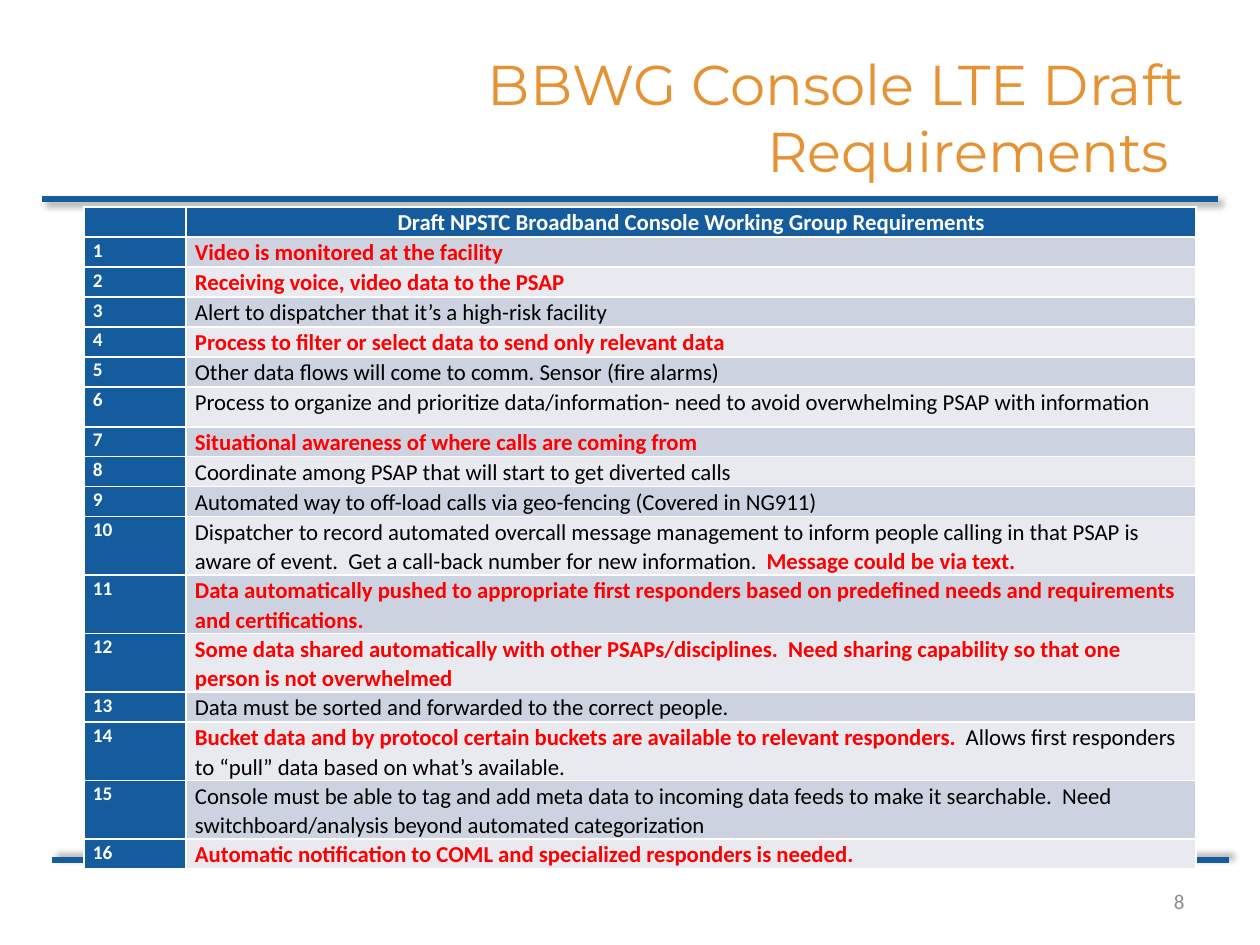
import pptx
import pptx.dml.color
import pptx.enum.shapes
import pptx.enum.text
import pptx.oxml
import pptx.oxml.ns
import pptx.util

PX = 914400 // 126
COLOURS = {
    "blue": "155C9E",
    "orange": "E69232",
    "red": "FF0000",
    "black": "000000",
    "white": "FFFFFF",
    "grey": "8C8C8C",
    "odd row": "CCD2DF",
    "even row": "E8EAF0",
}
ALIGN = pptx.enum.text.PP_ALIGN
ANCHOR = pptx.enum.text.MSO_ANCHOR
LINE_HEIGHT, LOOSE_HEIGHT, DOUBLE_HEIGHT = 30, 40, 58

# Each requirement is a row height and its spans; key spans are bold red.
REQUIREMENTS = [
    (LINE_HEIGHT, [("Video is monitored at the facility", True)]),
    (LINE_HEIGHT, [("Receiving voice, video data to the PSAP", True)]),
    (LINE_HEIGHT, [("Alert to dispatcher that it’s a high-risk facility", False)]),
    (LINE_HEIGHT, [("Process to filter or select data to send only relevant data", True)]),
    (LINE_HEIGHT, [("Other data flows will come to comm. Sensor (fire alarms)", False)]),
    (LOOSE_HEIGHT, [("Process to organize and prioritize data/information- need to avoid "
                     "overwhelming PSAP with information", False)]),
    (LINE_HEIGHT, [("Situational awareness of where calls are coming from", True)]),
    (LINE_HEIGHT, [("Coordinate among PSAP that will start to get diverted calls", False)]),
    (LINE_HEIGHT, [("Automated way to off-load calls via geo-fencing (Covered in NG911)", False)]),
    (DOUBLE_HEIGHT, [("Dispatcher to record automated overcall message management to inform "
                      "people calling in that PSAP is aware of event.  Get a call-back number "
                      "for new information.  ", False),
                     ("Message could be via text.", True)]),
    (DOUBLE_HEIGHT, [("Data automatically pushed to appropriate first responders based on "
                      "predefined needs and requirements and certifications.", True)]),
    (DOUBLE_HEIGHT, [("Some data shared automatically with other PSAPs/disciplines.  Need "
                      "sharing capability so that one person is not overwhelmed", True)]),
    (LINE_HEIGHT, [("Data must be sorted and forwarded to the correct people.", False)]),
    (DOUBLE_HEIGHT, [("Bucket data and by protocol certain buckets are available to relevant "
                      "responders.  ", True),
                     ("Allows first responders to “pull” data based on what’s available.", False)]),
    (DOUBLE_HEIGHT, [("Console must be able to tag and add meta data to incoming data feeds to "
                      "make it searchable.  Need switchboard/analysis beyond automated "
                      "categorization", False)]),
    (LINE_HEIGHT, [("Automatic notification to COML and specialized responders is needed.", True)]),
]


def colour(name):
    return pptx.dml.color.RGBColor.from_string(COLOURS[name])


def place(shape, left, top, width, height):
    shape.left, shape.top = left * PX, top * PX
    shape.width, shape.height = width * PX, height * PX


def style_paragraph(para, font_name, size, align, colour_name):
    para.alignment = align
    para.font.name = font_name
    para.font.size = pptx.util.Pt(size)
    para.font.color.rgb = colour(colour_name)


def add_title(page, text):
    title = page.shapes.title
    place(title, 252, 38, 945, 157)
    title.text_frame.text = text
    title.text_frame.vertical_anchor = ANCHOR.MIDDLE
    style_paragraph(title.text_frame.paragraphs[0], "Montserrat", 32, ALIGN.RIGHT, "orange")


def add_page_number(page, text):
    box = page.shapes.add_textbox(0, 0, 0, 0)
    place(box, 903, 876, 294, 50)
    box.text_frame.word_wrap = True
    box.text_frame.vertical_anchor = ANCHOR.MIDDLE
    box.text_frame.text = text
    style_paragraph(box.text_frame.paragraphs[0], "Calibri", 12, ALIGN.RIGHT, "grey")


def add_rule(page, right, left, y, shadow_degrees):
    """Draw a thick horizontal line with a soft shadow."""
    rule = page.shapes.add_connector(
        pptx.enum.shapes.MSO_CONNECTOR.STRAIGHT, right * PX, y * PX, left * PX, y * PX)
    rule.line.color.rgb = colour("blue")
    rule.line.width = pptx.util.Pt(3)
    rule._element.spPr.append(pptx.oxml.parse_xml(
        f'<a:effectLst {pptx.oxml.ns.nsdecls("a")}>'
        f'<a:outerShdw blurRad="{pptx.util.Pt(4)}" dist="{pptx.util.Pt(3)}" '
        f'dir="{shadow_degrees * 60000}" algn="tl" rotWithShape="0">'
        f'<a:srgbClr val="{COLOURS["black"]}"><a:alpha val="40000"/></a:srgbClr>'
        '</a:outerShdw></a:effectLst>'))


def fill_cell(cell, fill_name, size, spans, align=ALIGN.LEFT):
    """Format a cell; spans are (text, colour name, bold) triples."""
    cell.fill.solid()
    cell.fill.fore_color.rgb = colour(fill_name)
    cell.margin_left = cell.margin_right = 9 * PX
    cell.margin_top = cell.margin_bottom = 0
    para = cell.text_frame.paragraphs[0]
    para.alignment = align
    para.line_spacing = 1.07
    para.font.name = "Calibri"
    para.font.size = pptx.util.Pt(size)
    for text, colour_name, bold in spans:
        span = para.add_run()
        span.text = text
        span.font.color.rgb = colour(colour_name)
        span.font.bold = bold
    if not spans:
        para._p.append(pptx.oxml.parse_xml(
            f'<a:endParaRPr {pptx.oxml.ns.nsdecls("a")} sz="{size * 100}"/>'))


def add_requirements_table(page):
    heights = [LINE_HEIGHT] + [height for height, _ in REQUIREMENTS]
    widths = [102, 1010]
    table = page.shapes.add_table(
        len(heights), len(widths), 84 * PX, 207 * PX,
        sum(widths) * PX, sum(heights) * PX).table
    table.first_col = True
    for column, width in zip(table.columns, widths):
        column.width = width * PX
    for row, height in zip(table.rows, heights):
        row.height = height * PX

    fill_cell(table.cell(0, 0), "blue", 11, [])
    heading = "Draft NPSTC Broadband Console Working Group Requirements"
    fill_cell(table.cell(0, 1), "blue", 13, [(heading, "white", True)], ALIGN.CENTER)
    for number, (_, spans) in enumerate(REQUIREMENTS, start=1):
        fill_cell(table.cell(number, 0), "blue", 11, [(str(number), "white", True)])
        fill_cell(table.cell(number, 1), "odd row" if number % 2 else "even row", 13,
                  [(text, "red" if key else "black", key) for text, key in spans])


def main():
    deck = pptx.Presentation()
    deck.slide_width, deck.slide_height = 1260 * PX, 945 * PX
    page = deck.slides.add_slide(deck.slide_layouts[5])
    add_rule(page, 1218, 42, 199, 45)
    add_page_number(page, "8")
    add_rule(page, 1229, 52, 860, 315)
    add_requirements_table(page)
    add_title(page, "BBWG Console LTE Draft Requirements ")
    deck.save("out.pptx")


if __name__ == "__main__":
    main()
